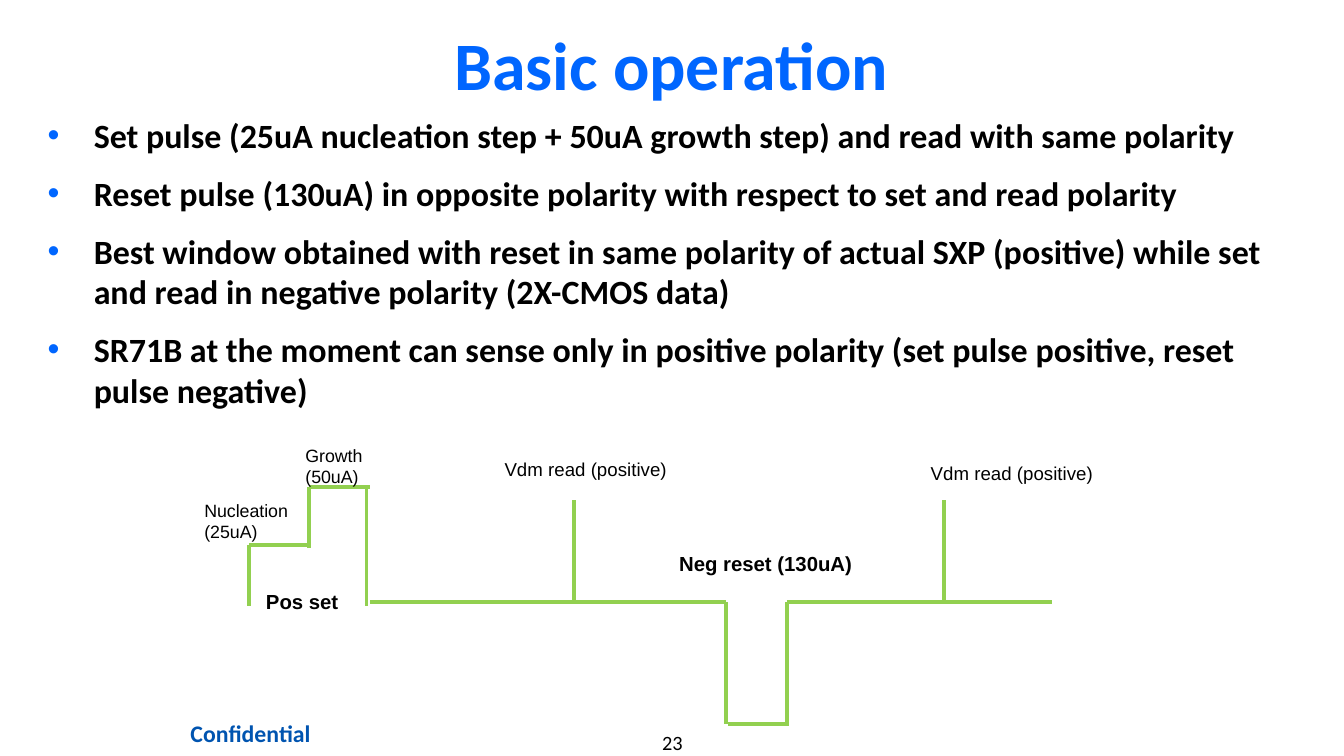
from lxml import etree
from pptx import Presentation
from pptx import util as u
from pptx.dml.color import RGBColor
from pptx.enum import shapes, text
from pptx.oxml.ns import qn

BLUE, NAVY, BLACK, GREEN = "0066FF", "0054B0", "000000", "92D050"

BULLETS = [
    "Set pulse (25uA nucleation step + 50uA growth step) and read with same polarity",
    "Reset pulse (130uA) in opposite polarity with respect to set and read polarity",
    "Best window obtained with reset in same polarity of actual SXP (positive) "
    "while set and read in negative polarity (2X-CMOS data)",
    "SR71B at the moment can sense only in positive polarity "
    "(set pulse positive, reset pulse negative)",
]


def colour(value):
    return RGBColor.from_string(value)


def add_bullet(para, mark, mark_colour, indent):
    props = para._p.get_or_add_pPr()
    props.set("marL", str(indent))
    props.set("indent", str(-indent))
    tint = etree.SubElement(props, qn("a:buClr"))
    etree.SubElement(tint, qn("a:srgbClr")).set("val", mark_colour)
    etree.SubElement(props, qn("a:buFont")).set("typeface", "Arial")
    etree.SubElement(props, qn("a:buChar")).set("char", mark)


def add_text(page, box, lines, size, font="Calibri", fill=BLACK, bold=False, align="LEFT",
             anchor="TOP", wrap=True, inset=None, bullet=None, gap=0):
    """Place one paragraph per line in box, given as left, top, width, height in cm."""
    frame = page.shapes.add_textbox(*map(u.Cm, box)).text_frame
    frame.word_wrap = wrap
    frame.vertical_anchor = getattr(text.MSO_ANCHOR, anchor)
    if inset is not None:
        frame.margin_left = frame.margin_right = u.Cm(inset)
        frame.margin_top = frame.margin_bottom = u.Cm(inset)
    for index, line in enumerate(lines):
        para = frame.paragraphs[0] if index == 0 else frame.add_paragraph()
        para.alignment = getattr(text.PP_ALIGN, align)
        if index and gap:
            para.space_before = u.Pt(gap)
        if bullet:
            add_bullet(para, bullet, BLUE, u.Cm(0.96))
        span = para.add_run()
        span.text = line
        span.font.name, span.font.size, span.font.bold = font, u.Pt(size), bold
        span.font.color.rgb = colour(fill)


def add_line(page, x1, y1, x2, y2):
    line = page.shapes.add_connector(shapes.MSO_CONNECTOR.STRAIGHT, *map(u.Cm, (x1, y1, x2, y2)))
    line.line.color.rgb = colour(GREEN)
    line.line.width = u.Pt(2.25)
    etree.SubElement(line._element.spPr, qn("a:effectLst"))


def add_header(page, box):
    add_text(page, box, ["Basic operation"], 40, fill=BLUE, bold=True,
             align="CENTER", anchor="MIDDLE")


def add_points(page, box):
    add_text(page, box, BULLETS, 20, bold=True, bullet="•", gap=10)


def add_waveform(page, box):
    left, top = box[:2]
    base, low = 3.42, 5.96
    segments = [
        # Set pulse: nucleation step, then growth step
        (1.18, 3.5, 1.18, 2.23), (1.18, 2.23, 2.45, 2.23), (2.43, 2.3, 2.43, 1.03),
        (2.43, 1.03, 3.7, 1.03), (3.62, 1.03, 3.62, 3.5),
        # Baseline and negative reset pulse
        (3.7, base, 11.09, base), (11.09, base, 11.09, low), (11.14, low, 12.41, low),
        (12.36, base, 12.36, low), (12.36, base, 17.87, base),
        # Read pulses
        (7.94, base, 7.94, 1.3), (15.63, base, 15.63, 1.3),
    ]
    for x1, y1, x2, y2 in segments:
        add_line(page, left + x1, top + y1, left + x2, top + y2)

    # Labels: offset, size, words, point size, bold, wrap
    labels = [
        (0, 1.16, 2.29, 1.14, "Nucleation (25uA)", 10.5, False, True),
        (2.1, 0.02, 2.29, 1.14, "Growth (50uA)", 10.5, False, True),
        (1.28, 3.02, 2.03, 0.76, "Pos set", 12, True, False),
        (9.87, 2.23, 4.14, 0.76, "Neg reset (130uA)", 12, True, False),
        (6.24, 0.3, 3.91, 0.74, "Vdm read (positive)", 11, False, False),
        (15.1, 0.37, 3.91, 0.74, "Vdm read (positive)", 11, False, False),
    ]
    for x, y, width, height, words, size, bold, wrap in labels:
        add_text(page, (left + x, top + y, width, height), [words], size,
                 font="Arial", bold=bold, wrap=wrap)


def add_footer(page, box):
    left, top = box[:2]
    add_text(page, (left, top, 3.96, 0.86), ["Confidential"], 14,
             fill=NAVY, bold=True, align="CENTER")
    add_text(page, (left + 8.3, top + 0.36, 4.9, 0.5), ["23"], 12, align="CENTER", inset=0)


def main():
    deck = Presentation()
    deck.slide_width, deck.slide_height = u.Cm(27.94), u.Cm(15.72)
    page = deck.slides.add_slide(deck.slide_layouts[6])
    add_footer(page, (3.23, 14.83, 13.2, 0.86))
    add_header(page, (2.08, 0.36, 23.75, 1.93))
    add_points(page, (0.74, 2.26, 26.04, 11.18))
    add_waveform(page, (4, 9.1, 19, 6))
    deck.save("out.pptx")


if __name__ == "__main__":
    main()
